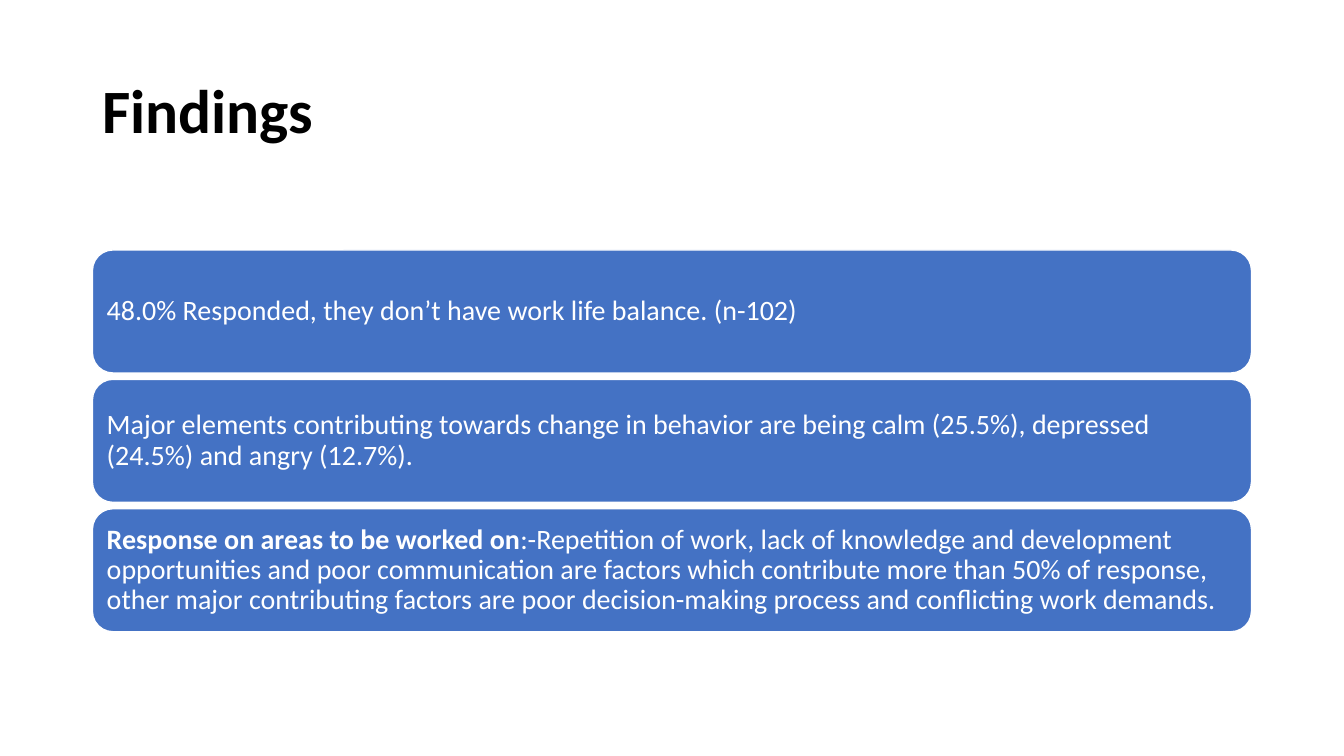
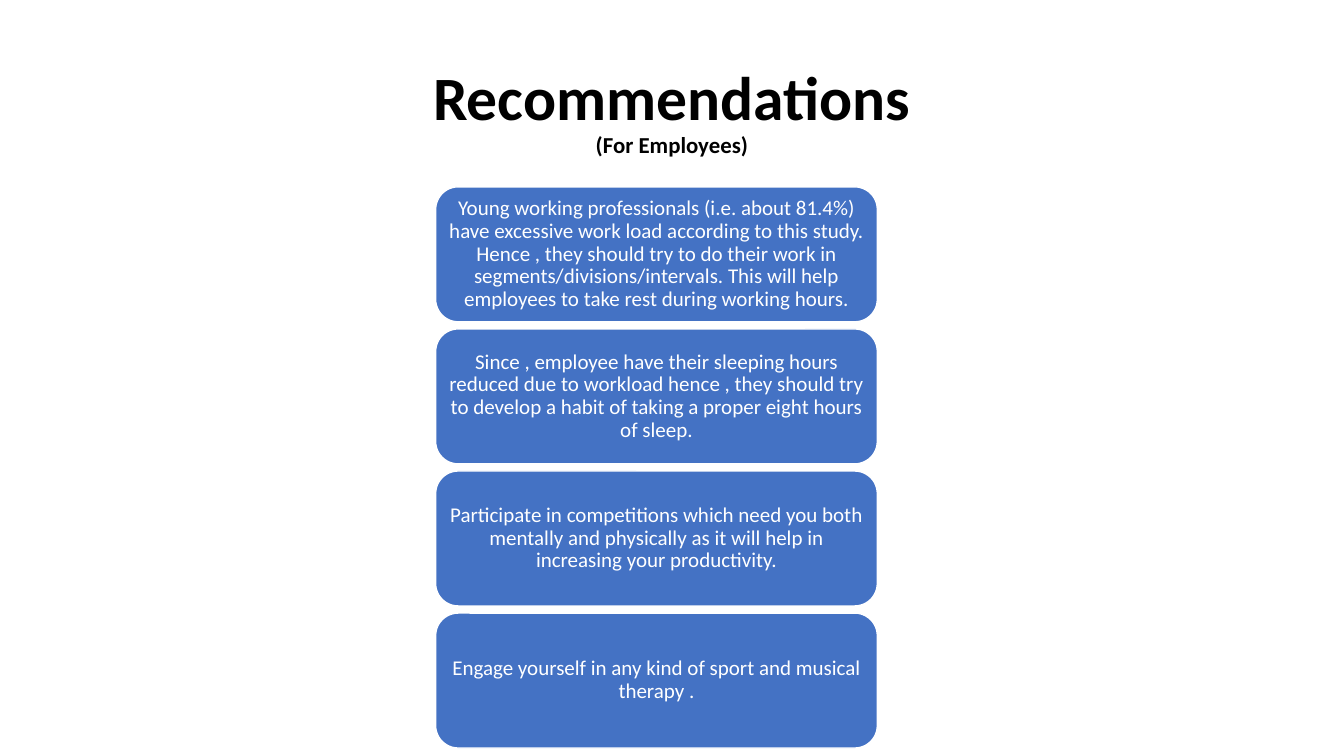
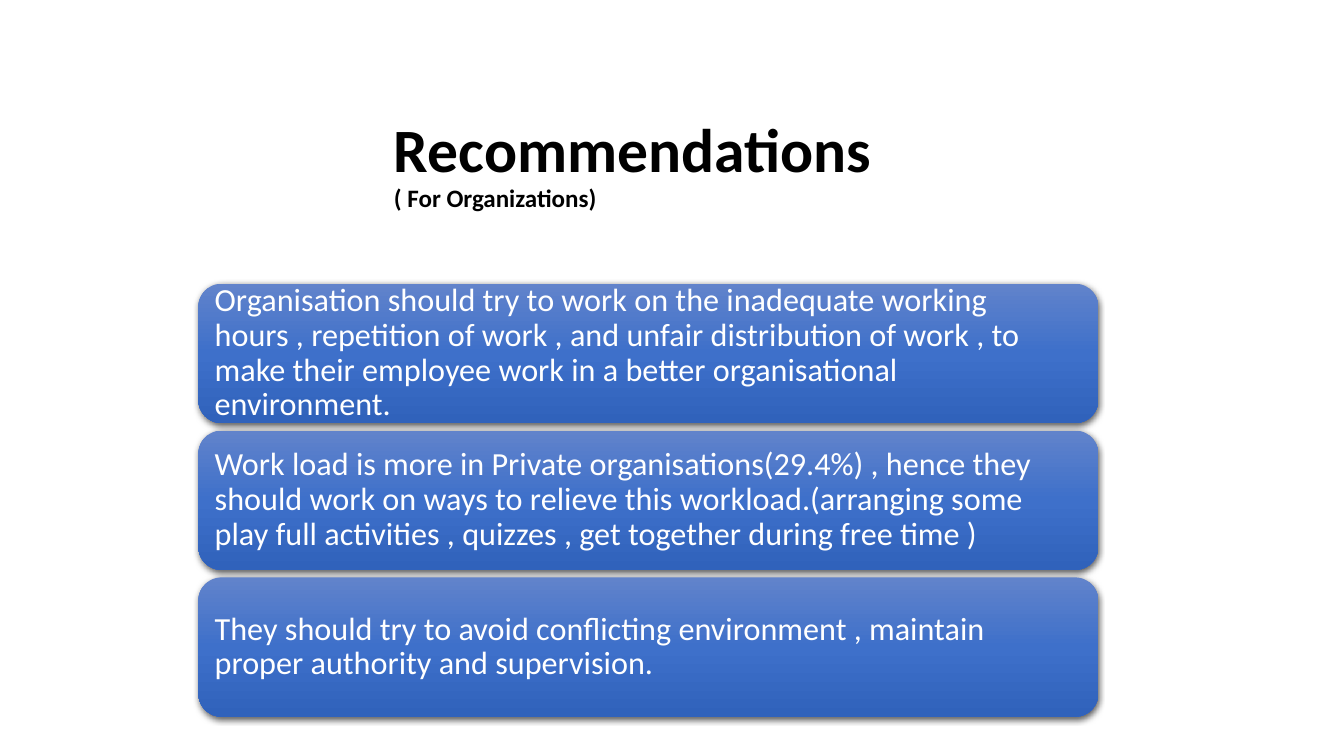
import copy
from dataclasses import dataclass

import pptx
import pptx.dml.color
import pptx.enum.shapes
import pptx.enum.text
import pptx.oxml
import pptx.util

Cm = pptx.util.Cm
Pt = pptx.util.Pt
Align = pptx.enum.text.PP_ALIGN
LEFT, CENTER = Align.LEFT, Align.CENTER


@dataclass(frozen=True)
class Theme:
    font: str = "Calibri"
    ink: str = "000000"
    paper: str = "FFFFFF"
    card: str = "4472C4"
    card_gradient: tuple = ((0, "6183CB"), (0.5, "3E70CA"), (1, "3062BB"))
    title_size: float = 44
    line_spacing: float = 0.9
    title_inset: tuple = (0.25, 0.13)


THEME = Theme()
TITLE_BOX = (2.33, 1.01, 29.21, 3.68)

SLIDES = [
    {
        "title": "Findings",
        "title_box": TITLE_BOX,
        "title_align": LEFT,
        "stack": {"left": 2.33, "top": 6.3, "width": 29.21, "height": 3.1, "gap": 0.16},
        "card_text": {"size": 20, "align": LEFT, "inset": (0.21, 0.21)},
        "cards": [
            [("48.0% Responded, they don’t have work life balance. (n-102)", False)],
            [("Major elements contributing towards change in behavior are being calm (25.5%), "
              "depressed (24.5%) and angry (12.7%).", False)],
            [("Response on areas to be worked on", True),
             (":-Repetition of work, lack of knowledge and development opportunities and poor "
              "communication are factors which contribute more than 50% of response, other major "
              "contributing factors are poor decision-making process and conflicting work demands.",
              False)],
        ],
    },
    {
        "title": "Recommendations",
        "subtitle": ("(For Employees)", 16.3),
        "title_box": TITLE_BOX,
        "title_align": CENTER,
        "stack": {"left": 10.98, "top": 4.71, "width": 11.13, "height": 3.4, "gap": 0.18},
        "card_text": {"size": 15, "align": CENTER, "inset": (0.16, 0.08)},
        "cards": [
            [("Young working professionals (i.e. about 81.4%) have excessive work load according to "
              "this study. Hence , they should try to do their work in segments/divisions/intervals. "
              "This will help employees to take rest during working hours.", False)],
            [("Since , employee have their sleeping hours reduced due to workload hence , they should "
              "try to develop a habit of taking a proper eight hours of sleep.", False)],
            [("Participate in competitions which need you both mentally and physically as it will "
              "help in increasing your productivity.", False)],
            [("Engage yourself in any kind of sport and musical therapy .", False)],
        ],
    },
    {
        "title": "Recommendations",
        "subtitle": ("( For Organizations)", 17.9),
        "title_box": (9.68, 2.54, 14.5, 3.27),
        "title_align": LEFT,
        "raised": True,
        "stack": {"left": 5, "top": 7.15, "width": 22.68, "height": 3.51, "gap": 0.19},
        "card_text": {"size": 23, "align": LEFT, "inset": (0.24, 0.24)},
        "cards": [
            [("Organisation should try to work on the inadequate working hours , repetition of work , "
              "and unfair distribution of work , to make their employee work in a better "
              "organisational environment.", False)],
            [("Work load is more in Private organisations(29.4%) , hence they should work on ways to "
              "relieve this workload.(arranging some play full activities , quizzes , get together "
              "during free time )", False)],
            [("They should try to avoid conflicting environment , maintain proper authority and "
              "supervision.", False)],
        ],
    },
]

SHADOW = (
    '<a:outerShdw xmlns:a="http://schemas.openxmlformats.org/drawingml/2006/main" '
    'blurRad="57150" dist="19050" dir="5400000" algn="ctr" rotWithShape="0">'
    '<a:srgbClr val="000000"><a:alpha val="63000"/></a:srgbClr></a:outerShdw>'
)


def rgb(value):
    return pptx.dml.color.RGBColor.from_string(value)


def write_text(shape, paragraphs, *, color, align, inset):
    frame = shape.text_frame
    frame.word_wrap = True
    frame.vertical_anchor = pptx.enum.text.MSO_ANCHOR.MIDDLE
    frame.margin_left = frame.margin_right = Cm(inset[0])
    frame.margin_top = frame.margin_bottom = Cm(inset[1])
    for index, runs in enumerate(paragraphs):
        paragraph = frame.add_paragraph() if index else frame.paragraphs[0]
        paragraph.alignment = align
        paragraph.line_spacing = THEME.line_spacing
        for text, size, bold in runs:
            run = paragraph.add_run()
            run.text = text
            run.font.name = THEME.font
            run.font.size = Pt(size)
            run.font.bold = bold
            run.font.color.rgb = rgb(color)


def raise_card(shape):
    shape.fill.gradient()
    shape.fill.gradient_angle = 270
    stop_list = shape._element.spPr.find(".//" + pptx.oxml.ns.qn("a:gsLst"))
    stop_list.append(copy.deepcopy(stop_list[0]))
    for stop, (position, color) in zip(shape.fill.gradient_stops, THEME.card_gradient):
        stop.position = position
        stop.color.rgb = rgb(color)
    shape.line.fill.background()
    effects = shape._element.spPr.find(pptx.oxml.ns.qn("a:effectLst"))
    effects.append(pptx.oxml.parse_xml(SHADOW))


def add_title(slide, content):
    lines = [[(content["title"], THEME.title_size, True)]]
    if "subtitle" in content:
        lines.append([(*content["subtitle"], True)])
    title = slide.shapes.add_textbox(*map(Cm, content["title_box"]))
    write_text(title, lines, color=THEME.ink, align=content["title_align"], inset=THEME.title_inset)


def add_cards(slide, content):
    stack, style = content["stack"], content["card_text"]
    for index, parts in enumerate(content["cards"]):
        top = stack["top"] + index * (stack["height"] + stack["gap"])
        card = slide.shapes.add_shape(
            pptx.enum.shapes.MSO_SHAPE.ROUNDED_RECTANGLE,
            Cm(stack["left"]), Cm(top), Cm(stack["width"]), Cm(stack["height"]))
        card.shadow.inherit = False
        if content.get("raised"):
            raise_card(card)
        else:
            card.fill.solid()
            card.fill.fore_color.rgb = rgb(THEME.card)
            card.line.color.rgb = rgb(THEME.paper)
            card.line.width = Pt(1)
        runs = [(text, style["size"], bold) for text, bold in parts]
        write_text(card, [runs], color=THEME.paper, align=style["align"], inset=style["inset"])


def main():
    presentation = pptx.Presentation()
    presentation.slide_width, presentation.slide_height = Cm(33.87), Cm(19.05)
    for content in SLIDES:
        slide = presentation.slides.add_slide(presentation.slide_layouts[6])
        add_title(slide, content)
        add_cards(slide, content)
    presentation.save("out.pptx")


if __name__ == "__main__":
    main()
